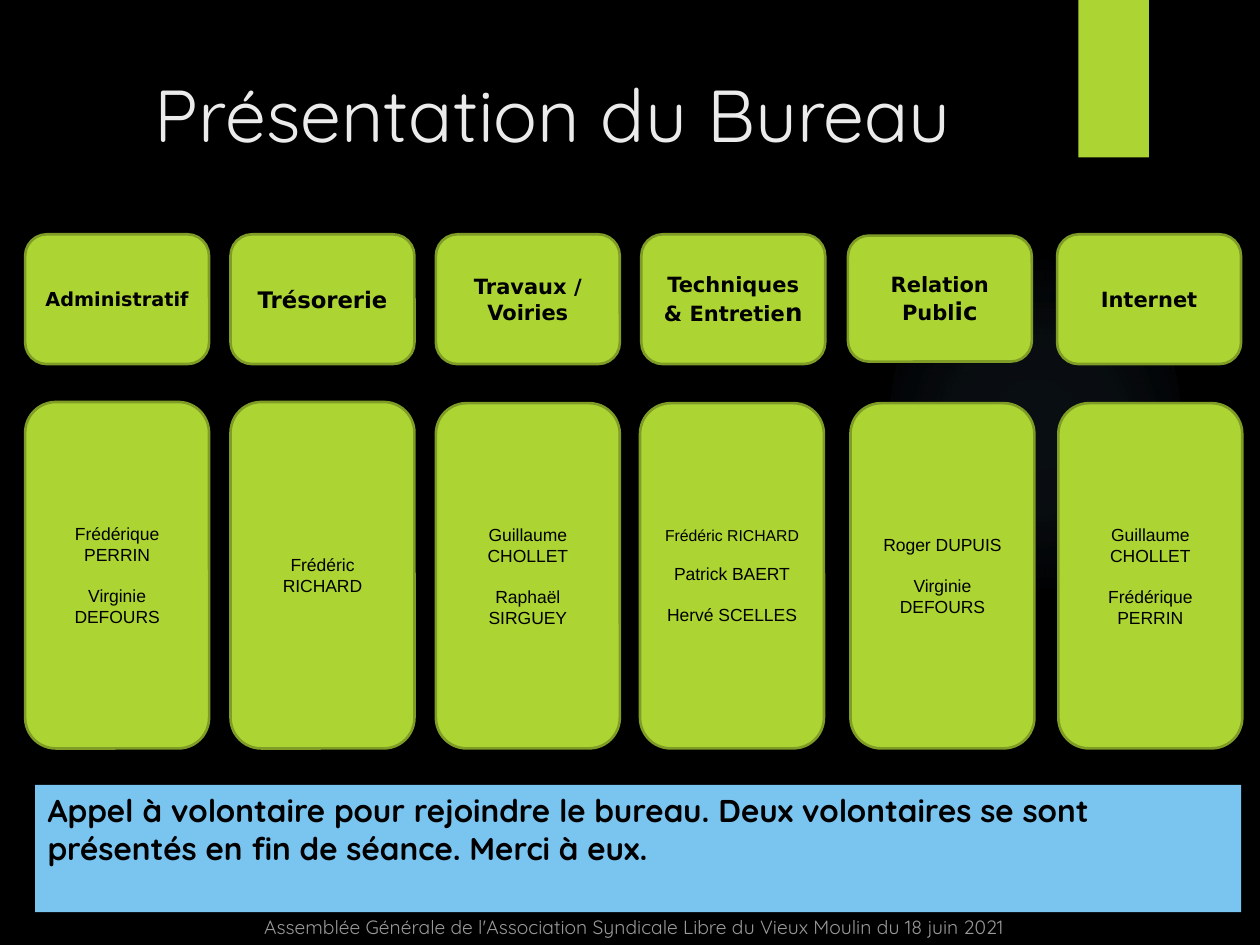
from dataclasses import dataclass

from lxml import etree
from pptx import Presentation
from pptx.dml.color import RGBColor
from pptx.enum.shapes import MSO_SHAPE
from pptx.enum.text import MSO_ANCHOR, MSO_AUTO_SIZE, PP_ALIGN
from pptx.oxml.ns import qn
from pptx.util import Inches, Pt

RECTANGLE, ROUNDED, ELLIPSE = MSO_SHAPE.RECTANGLE, MSO_SHAPE.ROUNDED_RECTANGLE, MSO_SHAPE.OVAL
CENTER, LEFT = PP_ALIGN.CENTER, PP_ALIGN.LEFT
TOP, MIDDLE, BOTTOM = MSO_ANCHOR.TOP, MSO_ANCHOR.MIDDLE, MSO_ANCHOR.BOTTOM


@dataclass(frozen=True)
class Theme:
    background: str = "000000"
    green: str = "ACD433"
    green_edge: str = "7F9D26"
    blue: str = "7AC4F0"
    title_color: str = "EBEBEB"
    ink: str = "000000"
    footer_color: str = "FFFFFF"
    display_font: str = "Quicksand"
    heading_font: str = "DejaVu Sans"
    name_font: str = "Arial"
    title_size: int = 42
    callout_size: int = 18
    heading_size: int = 12
    large_size: int = 14
    name_size: int = 10
    footer_size: int = 11


THEME = Theme()


@dataclass(frozen=True)
class Run:
    text: str
    size: float


@dataclass(frozen=True)
class Line:
    runs: tuple[Run, ...]
    space_before: float = 0


@dataclass(frozen=True)
class Box:
    left: float
    top: float
    height: float
    lines: tuple[Line, ...]
    width: float = 1.46


def line(text: str, size: float = THEME.name_size, space_before: float = 0) -> Line:
    return Line((Run(text, size),), space_before)


def heading(text: str, size: float = THEME.heading_size, enlarged: str = "") -> Line:
    """A heading line whose last letters may be larger."""
    runs = (Run(text, size),)
    return Line(runs + (Run(enlarged, THEME.large_size),) if enlarged else runs)


GAP = 11.5
HEADINGS = (
    Box(0.2, 1.86, 1.03, (heading("Administratif", 11),)),
    Box(1.83, 1.86, 1.03, (heading("Trésorerie", 13),)),
    Box(3.46, 1.86, 1.03, (heading("Travaux / Voiries"),)),
    Box(5.09, 1.86, 1.03, (heading("Techniques"), heading("& Entretie", enlarged="n"))),
    Box(6.73, 1.87, 1.0, (heading("Relation Publ", enlarged="ic"),)),
    Box(8.39, 1.86, 1.03, (heading("Internet"),)),
)
MEMBERS = (
    Box(0.2, 3.19, 2.75, (line("Frédérique PERRIN"), line("Virginie", space_before=GAP),
                          line("DEFOURS"))),
    Box(1.83, 3.19, 2.75, (line("Frédéric RICHARD"),)),
    Box(3.46, 3.2, 2.74, (line("Guillaume CHOLLET"), line("Raphaël SIRGUEY", space_before=GAP))),
    Box(5.08, 3.2, 2.74, (line("Frédéric RICHARD", 9), line("Patrick BAERT", space_before=10.35),
                          line("Hervé SCELLES", space_before=GAP))),
    Box(6.75, 3.2, 2.74, (line("Roger DUPUIS"), line("Virginie DEFOURS", space_before=GAP))),
    Box(8.4, 3.2, 2.74, (line("Guillaume CHOLLET"), line("Frédérique PERRIN", space_before=GAP))),
)


def write_lines(shape, lines: tuple[Line, ...], font: str, color: str,
                bold: bool = False, align=CENTER, anchor=MIDDLE) -> None:
    frame = shape.text_frame
    frame_format = {"word_wrap": True, "auto_size": MSO_AUTO_SIZE.NONE, "vertical_anchor": anchor}
    for name, value in frame_format.items():
        setattr(frame, name, value)
    for index, item in enumerate(lines):
        paragraph = frame.add_paragraph() if index else frame.paragraphs[0]
        paragraph.alignment = align
        if item.space_before:
            paragraph.space_before = Pt(item.space_before)
        for part in item.runs:
            run = paragraph.add_run()
            run.text = part.text
            for name, value in {"name": font, "size": Pt(part.size), "bold": bold}.items():
                setattr(run.font, name, value)
            run.font.color.rgb = RGBColor.from_string(color)


def place(shape, left: float, top: float, width: float, height: float) -> None:
    geometry = {"left": left, "top": top, "width": width, "height": height}
    for name, value in geometry.items():
        setattr(shape, name, Inches(value))


def add_block(slide, kind, left: float, top: float, width: float, height: float,
              fill: str, edge: str = ""):
    shape = slide.shapes.add_shape(kind, Inches(left), Inches(top), Inches(width), Inches(height))
    shape.shadow.inherit = False
    shape.fill.solid()
    shape.fill.fore_color.rgb = RGBColor.from_string(fill)
    if edge:
        shape.line.color.rgb = RGBColor.from_string(edge)
        shape.line.width = Pt(1.5)
    else:
        shape.line.fill.background()
    return shape


def add_color(parent, color: str, opacity: int) -> None:
    """Append an RGB colour with its opacity in percent."""
    element = etree.SubElement(parent, qn("a:srgbClr"), val=color)
    etree.SubElement(element, qn("a:alpha"), val=str(opacity * 1000))


def add_halo(slide) -> None:
    """Draw the faint round glow behind the boxes."""
    halo = add_block(slide, ELLIPSE, 7.06, 1.83, 2.31, 3.08, THEME.blue)
    solid = halo._element.spPr.find(qn("a:solidFill"))
    gradient = etree.Element(qn("a:gradFill"))
    stops = etree.SubElement(gradient, qn("a:gsLst"))
    for position, opacity in ((0, 7), (36, 6), (69, 0)):
        stop = etree.SubElement(stops, qn("a:gs"), pos=str(position * 1000))
        add_color(stop, THEME.blue, opacity)
    circle = etree.SubElement(gradient, qn("a:path"), path="circle")
    etree.SubElement(circle, qn("a:fillToRect"), l="50000", t="50000", r="50000", b="50000")
    solid.getparent().replace(solid, gradient)


def add_boxes(slide, boxes: tuple[Box, ...], font: str, bold: bool) -> None:
    for box in boxes:
        shape = add_block(slide, ROUNDED, box.left, box.top, box.width, box.height,
                          THEME.green, THEME.green_edge)
        write_lines(shape, box.lines, font, THEME.ink, bold)


def add_footer(slide) -> None:
    footer = slide.shapes.add_textbox(Inches(0.07), Inches(7.21), Inches(9.93), Inches(0.29))
    text = "Assemblée Générale de l'Association Syndicale Libre du Vieux Moulin du 18 juin 2021"
    write_lines(footer, (line(text, THEME.footer_size),), THEME.display_font,
                THEME.footer_color, anchor=BOTTOM)
    fill = footer.text_frame.paragraphs[0].runs[0]._r.rPr.find(qn("a:solidFill"))
    fill.remove(fill[0])
    add_color(fill, THEME.footer_color, 60)


def main() -> None:
    presentation = Presentation()
    presentation.slide_width, presentation.slide_height = Inches(10), Inches(7.5)
    slide = presentation.slides.add_slide(presentation.slide_layouts[5])
    slide.background.fill.solid()
    slide.background.fill.fore_color.rgb = RGBColor.from_string(THEME.background)

    add_halo(slide)
    add_block(slide, RECTANGLE, 8.56, 0, 0.56, 1.25, THEME.green)
    title = slide.shapes.title
    place(title, 0.53, 0.5, 7.71, 1.53)
    write_lines(title, (line("Présentation du Bureau", THEME.title_size),),
                THEME.display_font, THEME.title_color, anchor=TOP)

    add_boxes(slide, HEADINGS, THEME.heading_font, bold=True)
    add_boxes(slide, MEMBERS, THEME.name_font, bold=False)

    callout = add_block(slide, RECTANGLE, 0.28, 6.23, 9.57, 1.01, THEME.blue)
    message = ("Appel à volontaire pour rejoindre le bureau. Deux volontaires se sont "
               "présentés en fin de séance. Merci à eux.")
    write_lines(callout, (line(message, THEME.callout_size),), THEME.display_font,
                THEME.ink, bold=True, align=LEFT, anchor=TOP)
    add_footer(slide)
    presentation.save("out.pptx")


if __name__ == "__main__":
    main()
